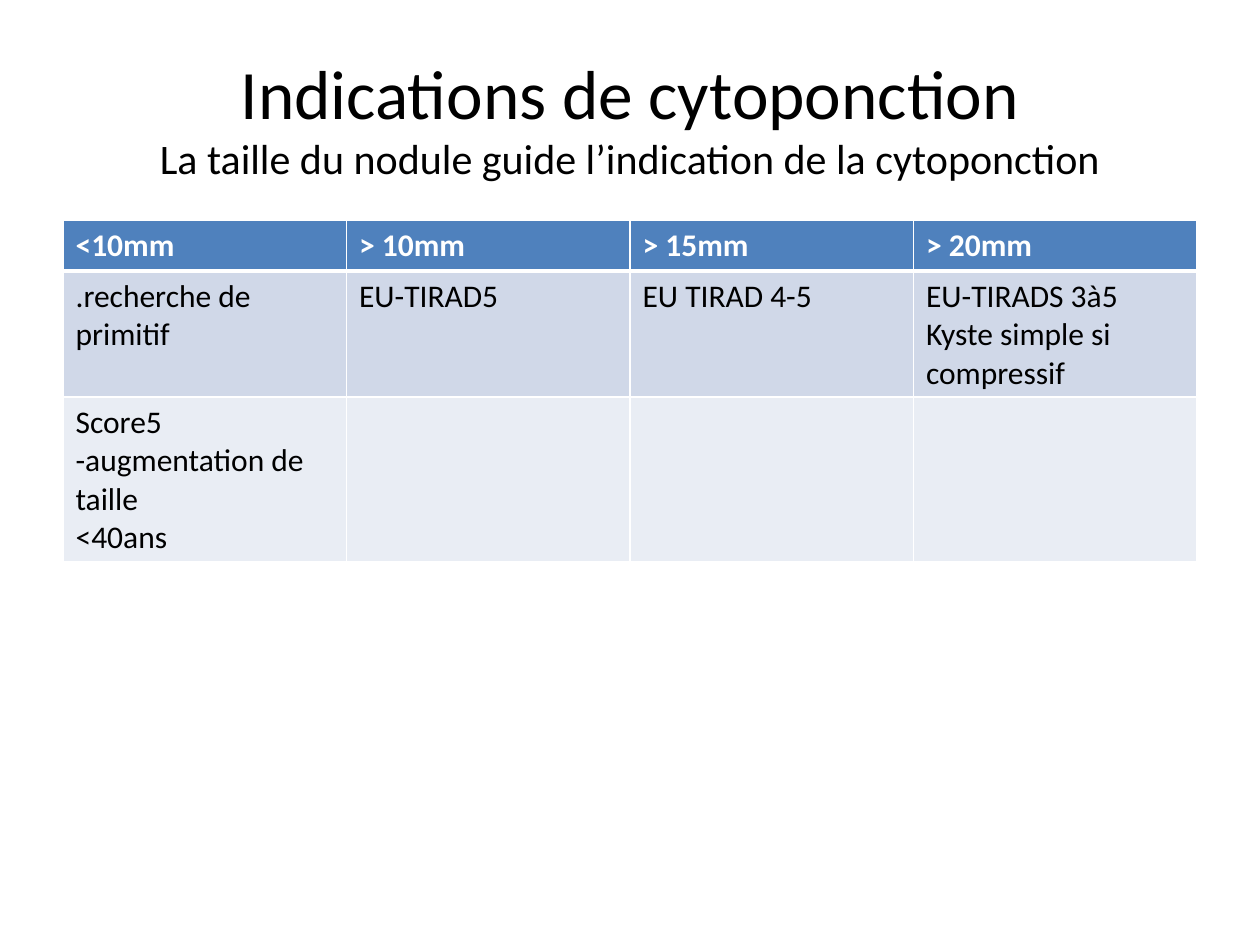
from pptx import Presentation
from pptx.dml.color import RGBColor
from pptx.enum.text import MSO_ANCHOR, PP_ALIGN
from pptx.oxml.ns import qn
from pptx.util import Inches, Pt
from lxml import etree

MIDDLE = MSO_ANCHOR.MIDDLE
CENTER = PP_ALIGN.CENTER

TITLE = "Indications de cytoponction"
SUBTITLE = "La taille du nodule guide l’indication de la cytoponction"
ROWS = [
    [["<10mm"], ["> 10mm"], ["> 15mm"], ["> 20mm"]],
    [[".recherche de primitif"], ["EU-TIRAD5"], ["EU TIRAD 4-5"],
     ["EU-TIRADS 3à5", "Kyste simple si compressif"]],
    [["Score5", "-augmentation de taille", "<40ans"], [], [], []],
]
ROW_HEIGHTS = [0.4, 1.0, 1.31]
LEFT, WIDTH = 0.5, 9
TITLE_TOP, TITLE_HEIGHT = 0.3, 1.25
TABLE_TOP = 1.75

THEME = {
    "font": "Calibri",
    "title": 39.6,
    "subtitle": 24,
    "body": 18,
    "ink": "000000",
    "header_ink": "FFFFFF",
    "border": "FFFFFF",
    "fills": ["4F81BD", "D0D8E8", "E9EDF4"],
}


def write(para, text, size, color=THEME["ink"], bold=False):
    span = para.add_run()
    span.text = text
    span.font.name = THEME["font"]
    span.font.size = Pt(size)
    span.font.bold = bold
    span.font.color.rgb = RGBColor.from_string(color)


def set_borders(cell, bottom):
    properties = cell._tc.get_or_add_tcPr()
    for side, width in {"L": 1, "R": 1, "T": 1, "B": bottom}.items():
        line = etree.SubElement(properties, qn(f"a:ln{side}"), w=str(Pt(width)))
        fill = etree.SubElement(line, qn("a:solidFill"))
        etree.SubElement(fill, qn("a:srgbClr"), val=THEME["border"])


def add_title(page):
    box = page.shapes.add_textbox(
        Inches(LEFT), Inches(TITLE_TOP), Inches(WIDTH), Inches(TITLE_HEIGHT))
    frame = box.text_frame
    frame.word_wrap = True
    frame.vertical_anchor = MIDDLE
    para = frame.paragraphs[0]
    para.alignment = CENTER
    write(para, TITLE, THEME["title"])
    para.add_line_break()
    write(para, SUBTITLE, THEME["subtitle"])


def add_indications(page):
    columns = len(ROWS[0])
    table = page.shapes.add_table(
        len(ROWS), columns, Inches(LEFT), Inches(TABLE_TOP),
        Inches(WIDTH), Inches(sum(ROW_HEIGHTS))).table
    for column in table.columns:
        column.width = Inches(WIDTH / columns)
    for row_index, row in enumerate(ROWS):
        table.rows[row_index].height = Inches(ROW_HEIGHTS[row_index])
        header = row_index == 0
        for column_index, lines in enumerate(row):
            cell = table.cell(row_index, column_index)
            below_header = row_index == 1
            set_borders(cell, 3 if header else 1)
            if below_header:
                cell._tc.tcPr.find(qn("a:lnT")).set("w", str(Pt(3)))
            cell.fill.solid()
            cell.fill.fore_color.rgb = RGBColor.from_string(THEME["fills"][row_index])
            frame = cell.text_frame
            for line_index, line in enumerate(lines):
                para = frame.add_paragraph() if line_index else frame.paragraphs[0]
                write(para, line, THEME["body"], bold=header,
                      color=THEME["header_ink"] if header else THEME["ink"])


def main():
    deck = Presentation()
    deck.slide_width, deck.slide_height = Inches(10), Inches(7.5)
    page = deck.slides.add_slide(deck.slide_layouts[6])
    add_title(page)
    add_indications(page)
    deck.save("out.pptx")


if __name__ == "__main__":
    main()
